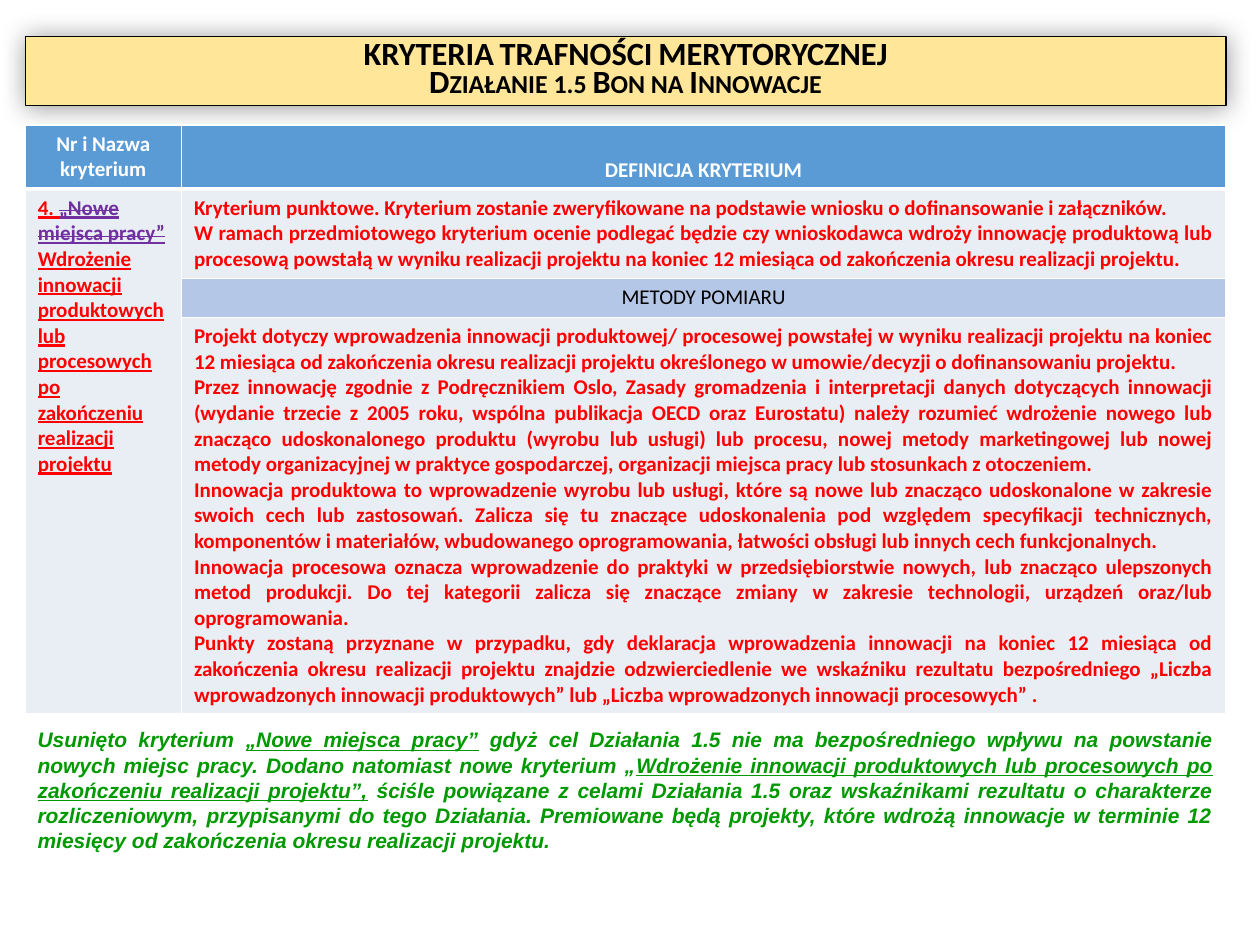
"""Build the slide on the merit criteria of Measure 1.5, Innovation Voucher."""
from lxml import etree
from pptx import Presentation
from pptx import util as u
from pptx.dml.color import RGBColor
from pptx.enum import shapes, text
from pptx.oxml.ns import qn

COLORS = {
    "title": "FFE699", "header": "5B9BD5", "body": "E9EDF4", "method": "B4C7E7",
    "black": "000000", "white": "FFFFFF", "red": "FF0000", "purple": "7030A0",
    "green": "009900",
}
LEFT, WIDTH = u.Inches(0.2), u.Inches(9.53)
COLUMN_WIDTHS = (1.24, 8.29)
ROW_HEIGHTS = (0.51, 0.71, 0.31, 3.14)

TITLE = ("KRYTERIA TRAFNOŚCI MERYTORYCZNEJ", "Działanie 1.5 Bon na Innowacje")
DEFINITION = (
    "Kryterium punktowe. Kryterium zostanie zweryfikowane na podstawie wniosku o dofinansowanie i załączników.",
    "W ramach przedmiotowego kryterium ocenie podlegać będzie czy wnioskodawca wdroży innowację produktową "
    "lub procesową powstałą w wyniku realizacji projektu na koniec 12 miesiąca od zakończenia okresu "
    "realizacji projektu.",
)
MEASUREMENT = (
    "Projekt dotyczy wprowadzenia innowacji produktowej/ procesowej powstałej w wyniku realizacji projektu "
    "na koniec 12 miesiąca od zakończenia okresu realizacji projektu określonego w umowie/decyzji o "
    "dofinansowaniu projektu.",
    "Przez innowację zgodnie z Podręcznikiem Oslo, Zasady gromadzenia i interpretacji danych dotyczących "
    "innowacji (wydanie trzecie z 2005 roku, wspólna publikacja OECD oraz Eurostatu) należy rozumieć "
    "wdrożenie nowego lub znacząco udoskonalonego produktu (wyrobu lub usługi) lub procesu, nowej metody "
    "marketingowej lub nowej metody organizacyjnej w praktyce gospodarczej, organizacji miejsca pracy lub "
    "stosunkach z otoczeniem.",
    "Innowacja produktowa to wprowadzenie wyrobu lub usługi, które są nowe lub znacząco udoskonalone w "
    "zakresie swoich cech lub zastosowań. Zalicza się tu znaczące udoskonalenia pod względem specyfikacji "
    "technicznych, komponentów i materiałów, wbudowanego oprogramowania, łatwości obsługi lub innych cech "
    "funkcjonalnych.",
    "Innowacja procesowa oznacza wprowadzenie do praktyki w przedsiębiorstwie nowych, lub znacząco "
    "ulepszonych metod produkcji. Do tej kategorii zalicza się znaczące zmiany w zakresie technologii, "
    "urządzeń oraz/lub oprogramowania.",
    "Punkty zostaną przyznane w przypadku, gdy deklaracja wprowadzenia innowacji na koniec 12 miesiąca od "
    "zakończenia okresu realizacji projektu znajdzie odzwierciedlenie we wskaźniku rezultatu bezpośredniego "
    "„Liczba wprowadzonych innowacji produktowych” lub „Liczba wprowadzonych innowacji procesowych” .",
)
RATIONALE = (
    ("Usunięto kryterium ", False),
    ("„Nowe miejsca pracy”", True),
    (" gdyż cel Działania 1.5 nie ma bezpośredniego wpływu na powstanie nowych miejsc pracy. "
     "Dodano natomiast nowe kryterium „", False),
    ("Wdrożenie innowacji produktowych lub procesowych po zakończeniu realizacji projektu”,", True),
    (" ściśle powiązane z celami Działania 1.5 oraz wskaźnikami rezultatu o charakterze rozliczeniowym, "
     "przypisanymi do tego Działania. Premiowane będą projekty, które wdrożą innowacje w terminie "
     "12 miesięcy od zakończenia okresu realizacji projektu.", False),
)


def rgb(name):
    """Return the named colour."""
    return RGBColor.from_string(COLORS[name])


def add_run(paragraph, wording, color, size=12, face="Calibri", bold=True, italic=False,
            underline=False, **attributes):
    """Add one formatted run; attributes go straight to its run properties."""
    run = paragraph.add_run()
    run.text = wording
    font = run.font
    font.size, font.name = u.Pt(size), face
    font.bold, font.italic, font.underline = bold, italic, underline
    font.color.rgb = rgb(color)
    for key, value in attributes.items():
        font._element.set(key, value)


def add_paragraphs(frame, wordings, align, color, spacing=None, **style):
    """Write one single-run paragraph for each wording."""
    for index, wording in enumerate(wordings):
        paragraph = frame.add_paragraph() if index else frame.paragraphs[0]
        paragraph.alignment = align
        if spacing:
            paragraph.line_spacing = spacing
        add_run(paragraph, wording, color, **style)


def add_soft_shadow(shape):
    """Give the shape a blurred grey shadow on all sides."""
    effects = etree.SubElement(shape._element.spPr, qn("a:effectLst"))
    shadow = etree.SubElement(effects, qn("a:outerShdw"), blurRad=str(u.Inches(0.2)),
                              dist="0", algn="ctr", rotWithShape="0")
    tint = etree.SubElement(shadow, qn("a:srgbClr"), val=COLORS["black"])
    etree.SubElement(tint, qn("a:alpha"), val="40000")


def add_title(slide):
    """Add the title banner."""
    banner = slide.shapes.add_shape(shapes.MSO_SHAPE.RECTANGLE, LEFT, u.Inches(0.29),
                                    WIDTH, u.Inches(0.55))
    banner.fill.solid()
    banner.fill.fore_color.rgb = rgb("title")
    banner.line.color.rgb = rgb("black")
    banner.line.width = u.Pt(0.75)
    add_soft_shadow(banner)
    frame = banner.text_frame
    frame.word_wrap = True
    frame.vertical_anchor = text.MSO_ANCHOR.MIDDLE
    add_paragraphs(frame, TITLE, text.PP_ALIGN.CENTER, "black", spacing=0.7, size=18.5, cap="small")


def style_cell(cell, fill, top, bottom):
    """Set white borders, with top and bottom widths in points, and the fill."""
    properties = cell._tc.get_or_add_tcPr()
    for side, width in (("L", 1), ("R", 1), ("T", top), ("B", bottom)):
        border = etree.SubElement(properties, qn(f"a:ln{side}"), w=str(u.Pt(width)))
        solid = etree.SubElement(border, qn("a:solidFill"))
        etree.SubElement(solid, qn("a:srgbClr"), val=COLORS["white"])
    cell.fill.solid()
    cell.fill.fore_color.rgb = rgb(fill)


def add_criterion_name(frame):
    """Write the struck old name and the new name of the criterion."""
    old_name = frame.paragraphs[0]
    add_run(old_name, "4. ", "red", underline=True)
    add_run(old_name, "„Nowe miejsca pracy”", "purple", underline=True, strike="sngStrike")
    add_run(frame.add_paragraph(), "Wdrożenie innowacji produktowych lub procesowych po zakończeniu "
            "realizacji projektu", "red", underline=True)


def add_criteria_table(slide):
    """Add the table with the criterion, its definition and its measurement."""
    table = slide.shapes.add_table(len(ROW_HEIGHTS), len(COLUMN_WIDTHS), LEFT, u.Inches(0.99),
                                   WIDTH, u.Inches(sum(ROW_HEIGHTS))).table
    for column, width in zip(table.columns, COLUMN_WIDTHS):
        column.width = u.Inches(width)
    for row, height in zip(table.rows, ROW_HEIGHTS):
        row.height = u.Inches(height)
    for index, fill in enumerate(("header", "body", "method", "body")):
        for column in range(len(COLUMN_WIDTHS)):
            cell_fill = "body" if index and column == 0 else fill
            style_cell(table.cell(index, column), cell_fill,
                       top=3 if index == 1 else 1, bottom=1 if index else 3)
    table.cell(1, 0).merge(table.cell(3, 0))

    center, justify = text.PP_ALIGN.CENTER, text.PP_ALIGN.JUSTIFY
    table.cell(0, 1).vertical_anchor = text.MSO_ANCHOR.BOTTOM
    add_paragraphs(table.cell(0, 0).text_frame, ["Nr i Nazwa kryterium"], center, "white")
    add_paragraphs(table.cell(0, 1).text_frame, ["DEFINICJA KRYTERIUM"], center, "white")
    add_criterion_name(table.cell(1, 0).text_frame)
    add_paragraphs(table.cell(1, 1).text_frame, DEFINITION, justify, "red")
    add_paragraphs(table.cell(2, 1).text_frame, ["METODY POMIARU"], center, "black", bold=False)
    add_paragraphs(table.cell(3, 1).text_frame, MEASUREMENT, justify, "red")


def add_rationale(slide):
    """Add the explanation of the change under the table."""
    frame = slide.shapes.add_textbox(LEFT, u.Inches(5.72), WIDTH, u.Inches(1.11)).text_frame
    frame.word_wrap = True
    paragraph = frame.paragraphs[0]
    paragraph.alignment = text.PP_ALIGN.JUSTIFY
    for wording, underline in RATIONALE:
        add_run(paragraph, wording, "green", face="Arial", italic=True, underline=underline)


def main():
    """Build and save the slide."""
    presentation = Presentation()
    presentation.slide_width, presentation.slide_height = u.Inches(10), u.Inches(7.5)
    slide = presentation.slides.add_slide(presentation.slide_layouts[6])
    add_title(slide)
    add_criteria_table(slide)
    add_rationale(slide)
    presentation.save("out.pptx")


if __name__ == "__main__":
    main()
